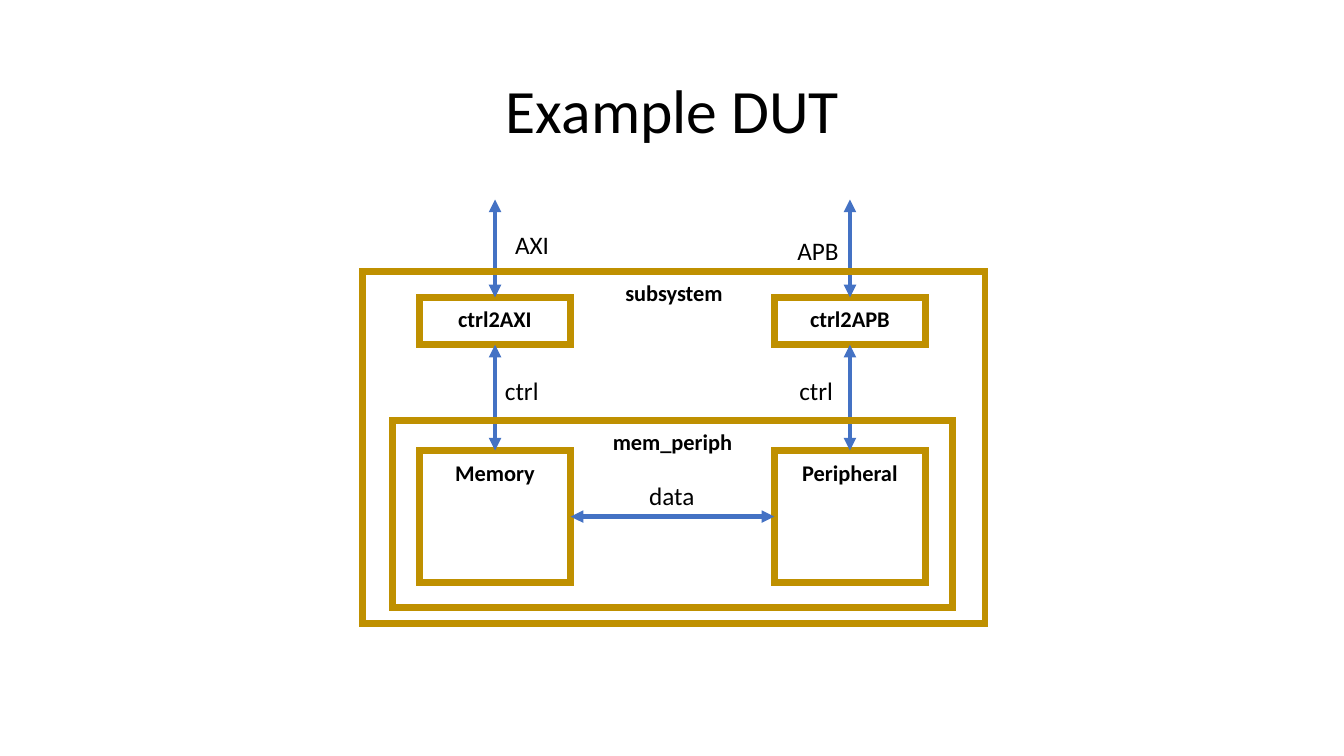
"""Builds the Example DUT block diagram slide."""
import pptx
import pptx.util
import pptx.dml.color
import pptx.enum.shapes
import pptx.enum.text
import pptx.oxml.ns
from lxml import etree

Inches, Pt = pptx.util.Inches, pptx.util.Pt
qn = pptx.oxml.ns.qn
PP, MSO = pptx.enum.text.PP_ALIGN, pptx.enum.text.MSO_ANCHOR
GOLD = pptx.dml.color.RGBColor(0xBF, 0x90, 0x00)
BLUE = pptx.dml.color.RGBColor(0x44, 0x72, 0xC4)
BLACK = pptx.dml.color.RGBColor(0, 0, 0)

COLS = (4.16, 7.68)
BLOCK_W = 1.5
PORT_Y, CTRL_Y, BLOCK_Y = 1.98, 2.95, 4.47
CTRL_H, BLOCK_H = 0.47, 1.31

prs = pptx.Presentation()
prs.slide_width, prs.slide_height = Inches(13.33), Inches(7.5)
s = prs.slides.add_slide(prs.slide_layouts[5])


def write(tf, text, size, bold=False, align=PP.CENTER):
    """Put one run of text into a frame."""
    p = tf.paragraphs[0]
    p.alignment = align
    r = p.add_run()
    r.text = text
    r.font.name, r.font.size, r.font.bold = "Calibri", Pt(size), bold
    r.font.color.rgb = BLACK
    return p


def box(text, x, y, w, h):
    """Draw an outlined module with its name at the top."""
    sp = s.shapes.add_shape(pptx.enum.shapes.MSO_SHAPE.RECTANGLE,
                            Inches(x), Inches(y), Inches(w), Inches(h))
    sp.shadow.inherit = False
    sp.fill.background()
    sp.line.color.rgb, sp.line.width = GOLD, Pt(5)
    ln = sp.line.color and sp.element.spPr.find(qn("a:ln"))
    etree.SubElement(ln, qn("a:miter"), lim="800000")
    tf = sp.text_frame
    tf.word_wrap = False
    tf.vertical_anchor = MSO.TOP
    tf.margin_left = tf.margin_right = Inches(0.1)
    tf.margin_top = tf.margin_bottom = Inches(0.08)
    write(tf, text, 16, True)
    return sp


title = s.shapes.title
title.left, title.top = Inches(0.92), Inches(0.4)
title.width, title.height = Inches(11.5), Inches(1.45)
title.text_frame.vertical_anchor = MSO.MIDDLE
write(title.text_frame, "Example DUT", 44).line_spacing = 0.9

blocks = [box(name, x, BLOCK_Y, BLOCK_W, BLOCK_H)
          for name, x in zip(("Memory", "Peripheral"), COLS)]
ctrls = [box(name, x, CTRL_Y, BLOCK_W, CTRL_H)
         for name, x in zip(("ctrl2AXI", "ctrl2APB"), COLS)]

arrows = [(blocks[0], 3, blocks[1], 1)]
for ctrl, block in zip(ctrls, blocks):
    arrows += [(ctrl, 2, block, 0), (ctrl, 0, None, None)]

for start, start_side, end, end_side in arrows:
    x = start.left + start.width // 2
    c = s.shapes.add_connector(pptx.enum.shapes.MSO_CONNECTOR.STRAIGHT,
                               x, start.top, x, Inches(PORT_Y))
    c.begin_connect(start, start_side)
    if end is not None:
        c.end_connect(end, end_side)
    c.line.color.rgb, c.line.width = BLUE, Pt(3)
    ln = c.element.spPr.find(qn("a:ln"))
    for tip in ("a:headEnd", "a:tailEnd"):
        etree.SubElement(ln, qn(tip), type="triangle")
    etree.SubElement(c.element.spPr, qn("a:effectLst"))

for text, x, y, w in (("data", 6.34, 4.72, 0.66), ("ctrl", 4.91, 3.67, 0.54),
                      ("ctrl", 7.83, 3.67, 0.54), ("APB", 7.81, 2.29, 0.61),
                      ("AXI", 5.01, 2.23, 0.54)):
    tf = s.shapes.add_textbox(Inches(x), Inches(y), Inches(w), Inches(0.4)).text_frame
    tf.word_wrap = False
    tf.auto_size = pptx.enum.text.MSO_AUTO_SIZE.SHAPE_TO_FIT_TEXT
    write(tf, text, 18, align=PP.LEFT)

box("mem_periph", 3.89, 4.17, 5.56, 1.86)
box("subsystem", 3.6, 2.69, 6.17, 3.5)

prs.save("out.pptx")
